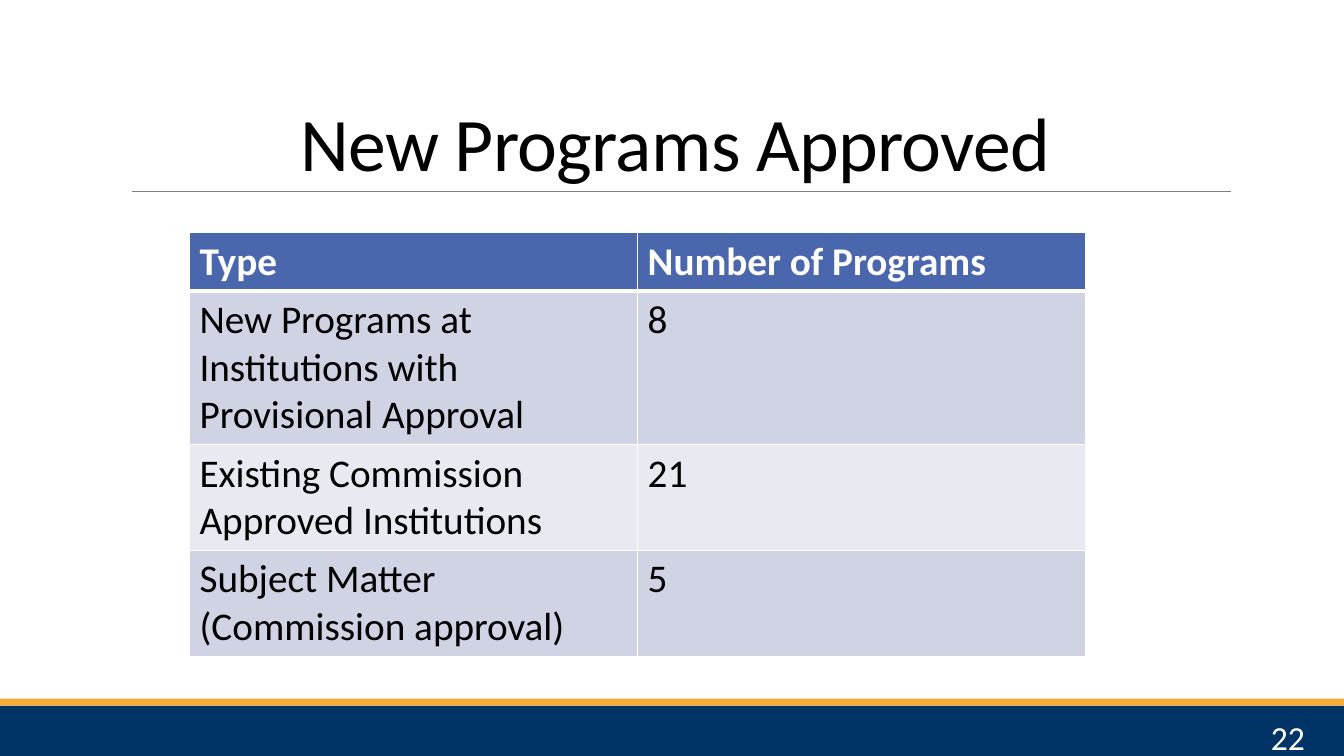
from dataclasses import dataclass

from lxml.etree import SubElement
from pptx import Presentation
from pptx.dml.color import RGBColor
from pptx.enum.shapes import MSO_CONNECTOR, MSO_SHAPE
from pptx.enum.text import MSO_ANCHOR, PP_ALIGN
from pptx.oxml.ns import qn
from pptx.slide import Slide
from pptx.table import _Cell
from pptx.text.text import _Run
from pptx.util import Inches, Pt

WIDTH, HEIGHT = Inches(13.33), Inches(7.5)


@dataclass(frozen=True)
class Theme:
    font: str = "Calibri"
    navy: str = "003366"
    gold: str = "FAAC35"
    rule: str = "808080"
    header: str = "4A66AC"
    bands: tuple[str, str] = ("D0D3E3", "E9EAF1")
    dark: str = "000000"
    light: str = "FFFFFF"
    title_size: float = 54
    table_size: float = 28
    number_size: float = 24
    rule_width: float = 0.5
    border_width: float = 1
    header_border: float = 3


@dataclass(frozen=True)
class Box:
    """An area in percent of the slide's width and height."""
    left: float
    top: float
    width: float
    height: float

    def emu(self) -> tuple[int, int, int, int]:
        return x(self.left), y(self.top), x(self.width), y(self.height)


@dataclass(frozen=True)
class Band:
    box: Box
    color: str


@dataclass(frozen=True)
class TableRow:
    label: str
    count: str
    height: float


THEME = Theme()
BANDS = [
    Band(Box(0, 93.33, 100, 6.67), THEME.navy),
    Band(Box(0, 92.4, 100, 0.93), THEME.gold),
]
TITLE_BOX = Box(9, 4.13, 82.5, 21.2)
RULE_BOX = Box(9.83, 25.33, 81.77, 0)
TABLE_LEFT, TABLE_TOP, TABLE_WIDTH = 14.1, 30.8, 66.69
NUMBER_BOX = Box(87.1, 94.13, 10.73, 5.33)
ROWS = [
    TableRow("Type", "Number of Programs", 7.5),
    TableRow("New Programs at Institutions with Provisional Approval", "8", 20.3),
    TableRow("Existing Commission Approved Institutions", "21", 14),
    TableRow("Subject Matter (Commission approval)", "5", 14),
]


def x(percent: float) -> int:
    return round(WIDTH * percent / 100)


def y(percent: float) -> int:
    return round(HEIGHT * percent / 100)


def style_run(r: _Run, size: float, color: str, bold: bool = False) -> None:
    r.font.name = THEME.font
    r.font.size = Pt(size)
    r.font.bold = bold
    r.font.color.rgb = RGBColor.from_string(color)


def add_band(slide: Slide, band: Band) -> None:
    sp = slide.shapes.add_shape(MSO_SHAPE.RECTANGLE, *band.box.emu())
    sp.shadow.inherit = False
    sp.fill.solid()
    sp.fill.fore_color.rgb = RGBColor.from_string(band.color)
    sp.line.fill.background()


def add_rule(slide: Slide, box: Box) -> None:
    left, top, width, _ = box.emu()
    line = slide.shapes.add_connector(
        MSO_CONNECTOR.STRAIGHT, left, top, left + width, top)
    line.line.color.rgb = RGBColor.from_string(THEME.rule)
    line.line.width = Pt(THEME.rule_width)
    SubElement(line._element.spPr, qn("a:effectLst"))


def set_title(slide: Slide, text: str) -> None:
    sp = slide.shapes.title
    sp.left, sp.top, sp.width, sp.height = TITLE_BOX.emu()
    tf = sp.text_frame
    tf.text = text
    tf.word_wrap = True
    tf.vertical_anchor = MSO_ANCHOR.BOTTOM
    p = tf.paragraphs[0]
    p.alignment = PP_ALIGN.CENTER
    p.line_spacing = 0.85
    r = p.runs[0]
    style_run(r, THEME.title_size, THEME.dark)
    r._r.get_or_add_rPr().set("spc", "-50")


def set_borders(cell: _Cell, top: float, bottom: float) -> None:
    side = THEME.border_width
    tcPr = cell._tc.get_or_add_tcPr()
    for tag, width in (("lnL", side), ("lnR", side), ("lnT", top), ("lnB", bottom)):
        ln = SubElement(tcPr, qn(f"a:{tag}"), w=str(Pt(width)))
        fill = SubElement(ln, qn("a:solidFill"))
        SubElement(fill, qn("a:srgbClr"), val=THEME.light)


def fill_cell(cell: _Cell, text: str, row: int) -> None:
    is_header = row == 0
    thin, thick = THEME.border_width, THEME.header_border
    # Borders come before the fill in the cell's properties
    set_borders(cell, thick if row == 1 else thin, thick if is_header else thin)
    color = THEME.header if is_header else THEME.bands[(row - 1) % 2]
    cell.fill.solid()
    cell.fill.fore_color.rgb = RGBColor.from_string(color)
    cell.text_frame.text = text
    style_run(cell.text_frame.paragraphs[0].runs[0], THEME.table_size,
              THEME.light if is_header else THEME.dark, is_header)


def add_program_table(slide: Slide, rows: list[TableRow]) -> None:
    box = Box(TABLE_LEFT, TABLE_TOP, TABLE_WIDTH, sum(row.height for row in rows))
    table = slide.shapes.add_table(len(rows), 2, *box.emu()).table
    for i, row in enumerate(rows):
        table.rows[i].height = y(row.height)
        for j, text in enumerate((row.label, row.count)):
            fill_cell(table.cell(i, j), text, i)


def add_page_number(slide: Slide, number: str) -> None:
    tf = slide.shapes.add_textbox(*NUMBER_BOX.emu()).text_frame
    tf.word_wrap = True
    tf.text = number
    p = tf.paragraphs[0]
    p.alignment = PP_ALIGN.RIGHT
    style_run(p.runs[0], THEME.number_size, THEME.light)


def main() -> None:
    prs = Presentation()
    prs.slide_width, prs.slide_height = WIDTH, HEIGHT
    slide = prs.slides.add_slide(prs.slide_layouts[5])

    # Footer bands and title rule
    for band in BANDS:
        add_band(slide, band)
    add_rule(slide, RULE_BOX)

    # Content
    set_title(slide, "New Programs Approved")
    add_program_table(slide, ROWS)
    add_page_number(slide, "22")

    prs.save("out.pptx")


if __name__ == "__main__":
    main()
